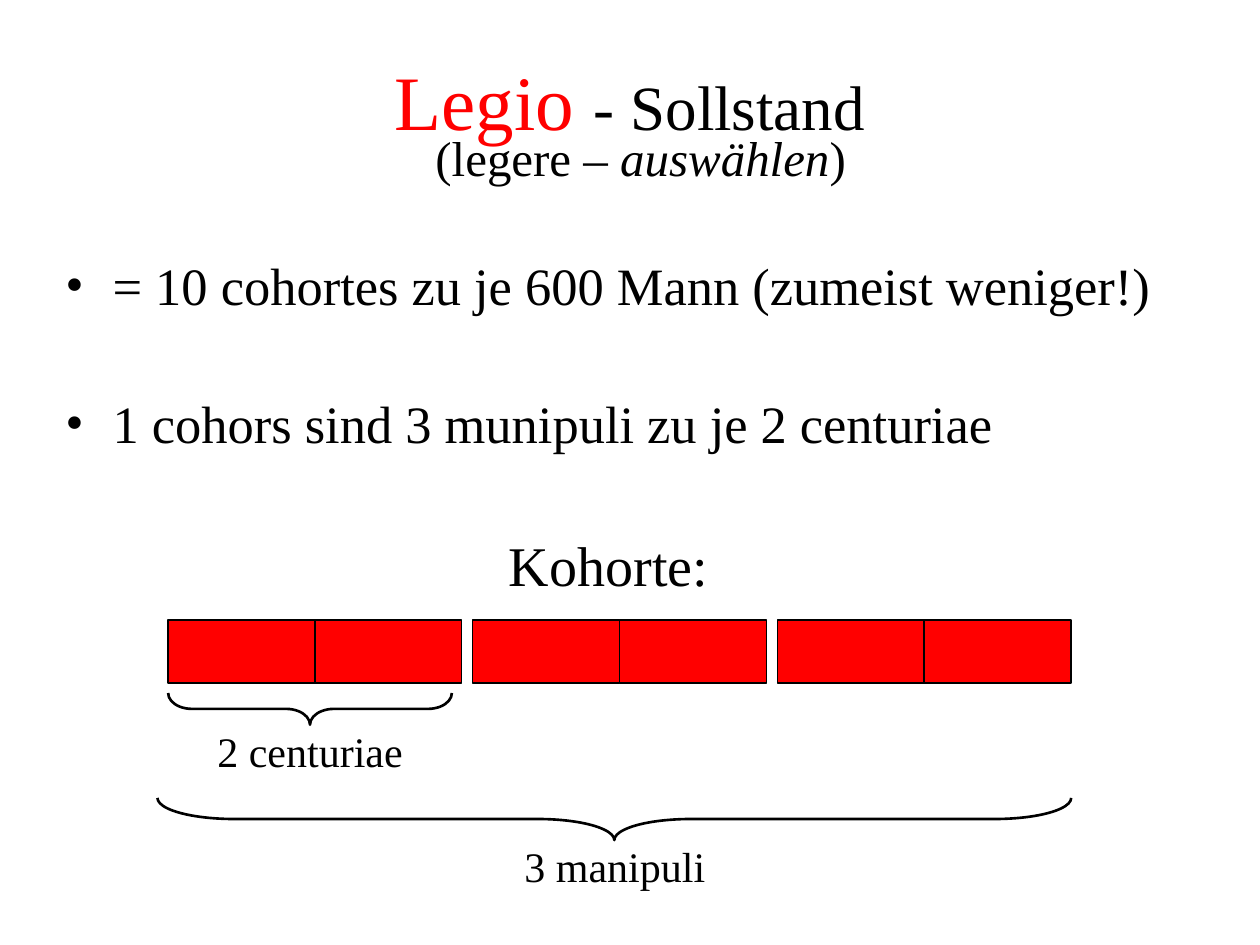
from lxml.etree import SubElement
from pptx import Presentation
from pptx.dml.color import RGBColor
from pptx.enum.shapes import MSO_SHAPE
from pptx.enum.text import MSO_ANCHOR, MSO_AUTO_SIZE, PP_ALIGN
from pptx.oxml.ns import qn
from pptx.util import Cm, Pt

FONT = "Times New Roman"
HEX = {"red": "FF0000", "black": "000000"}


def add_run(para, text, size, color="black", slant=False):
    run = para.add_run()
    run.text = text
    font = run.font
    font.name, font.size, font.italic = FONT, Pt(size), slant
    font.color.rgb = RGBColor.from_string(HEX[color])


def add_box(left, top, width, height):
    box = slide.shapes.add_textbox(Cm(left), Cm(top), Cm(width), Cm(height))
    frame = box.text_frame
    frame.word_wrap = True
    frame.margin_top = Cm(0.22)
    return frame


deck = Presentation()
deck.slide_width, deck.slide_height = Cm(25.4), Cm(19.05)
slide = deck.slides.add_slide(deck.slide_layouts[5])

# Title
title = slide.shapes.title
title.left, title.top = Cm(1.9), Cm(1.07)
title.width, title.height = Cm(21.6), Cm(2.74)
frame = title.text_frame
frame.auto_size = MSO_AUTO_SIZE.NONE
frame.vertical_anchor = MSO_ANCHOR.TOP
frame.margin_top = 0
para = frame.paragraphs[0]
para.alignment = PP_ALIGN.CENTER
add_run(para, "Legio ", 44, "red")
add_run(para, "- Sollstand", 36)

# Bullet list
frame = add_box(1.07, 4.88, 23.7, 5.28)
items = ["= 10 cohortes zu je 600 Mann (zumeist weniger!)",
         "1 cohors sind 3 munipuli zu je 2 centuriae"]
for num, text in enumerate(items):
    para = frame.add_paragraph() if num else frame.paragraphs[0]
    props = para._p.get_or_add_pPr()
    props.set("marL", str(Cm(0.95)))
    props.set("indent", str(-Cm(0.95)))
    SubElement(props, qn("a:buFont")).set("typeface", FONT)
    SubElement(props, qn("a:buChar")).set("char", "•")
    if num:
        para.space_before = Pt(43)
    add_run(para, text, 30)

# Cohort: three manipuli of two centuriae each
wide, pitch = 2.96, 6.14
for pair in range(3):
    for half in range(2):
        left = 3.39 + pair * pitch + half * wide
        block = slide.shapes.add_shape(
            MSO_SHAPE.RECTANGLE, Cm(left), Cm(12.5), Cm(wide), Cm(1.27))
        block.shadow.inherit = False
        block.fill.solid()
        block.fill.fore_color.rgb = RGBColor.from_string(HEX["red"])
        block.line.color.rgb = RGBColor.from_string(HEX["black"])
        block.line.width = Pt(0.75)

# Braces, turned to point down: left, top, thickness, span, curve
braces = [(5.93, 11.43, 0.64, 5.72, 0.75),
          (11.96, 7.3, 0.85, 18.42, 1.81)]
for left, top, thick, span, curve in braces:
    brace = slide.shapes.add_shape(
        MSO_SHAPE.LEFT_BRACE, Cm(left), Cm(top), Cm(thick), Cm(span))
    brace.rotation = 270
    brace.adjustments[0] = curve
    brace.shadow.inherit = False
    brace.fill.background()
    brace.line.color.rgb = RGBColor.from_string(HEX["black"])
    brace.line.width = Pt(1.5)

# Centred labels: place, size, runs with slant
labels = [
    ((3.39, 14.4, 5.72, 1.27), 24, [("2 centuriae", False)]),
    ((9.96, 16.72, 4.87, 1.27), 24, [("3 manipuli", False)]),
    ((6.78, 2.36, 12.27, 1.45), 28,
     [("(legere – ", False), ("auswählen", True), (")", False)]),
    ((5.92, 10.47, 12.7, 1.6), 32, [("Kohorte:", False)]),
]
for place, size, runs in labels:
    para = add_box(*place).paragraphs[0]
    para.alignment = PP_ALIGN.CENTER
    for text, slant in runs:
        add_run(para, text, size, slant=slant)

deck.save("out.pptx")
